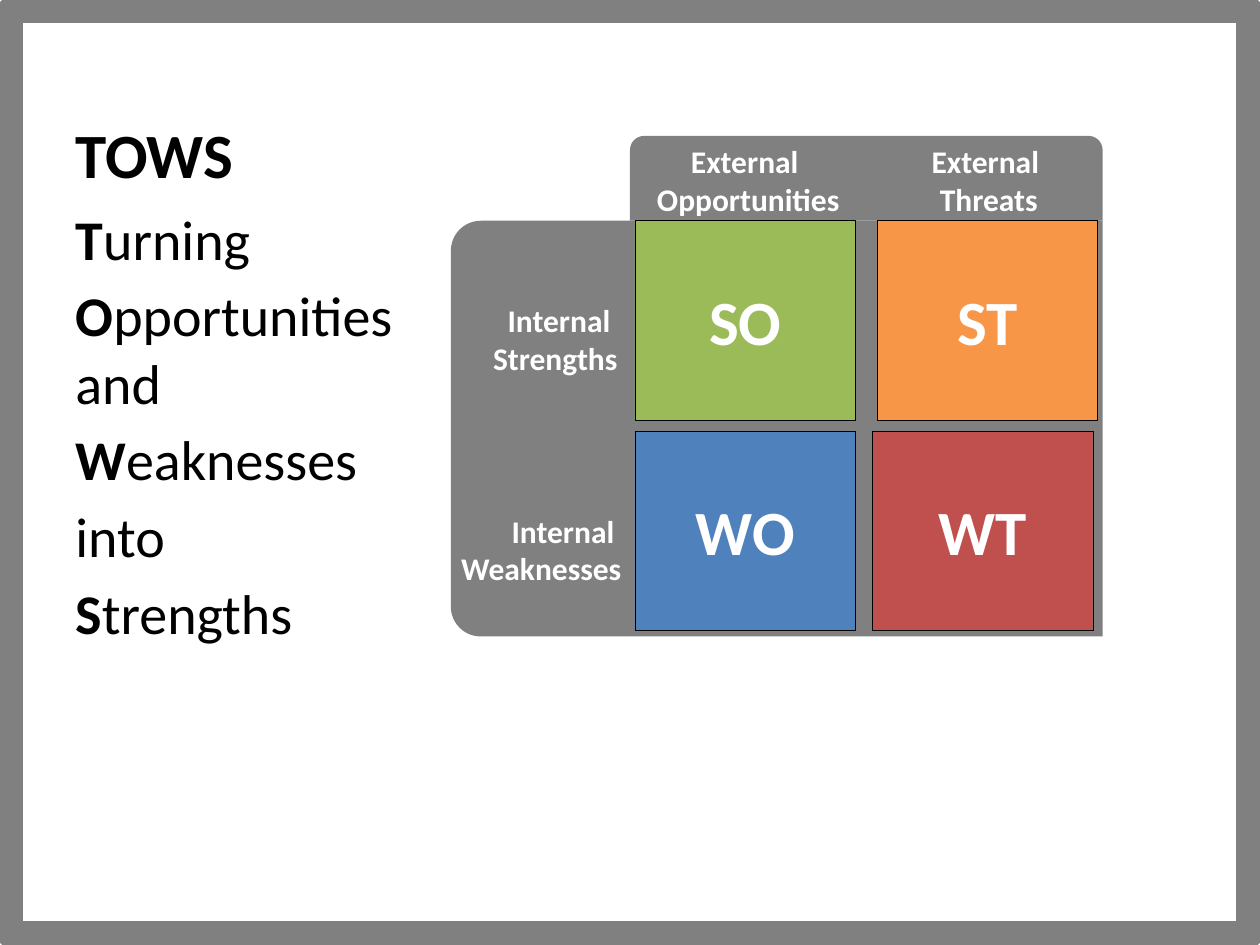
from pptx import Presentation
from pptx.dml.color import RGBColor
from pptx.enum.shapes import MSO_SHAPE
from pptx.enum.text import MSO_ANCHOR, MSO_AUTO_SIZE, PP_ALIGN
from pptx.util import Cm, Pt

RECT = MSO_SHAPE.RECTANGLE
TAB = MSO_SHAPE.ROUND_2_SAME_RECTANGLE
LEFT, CENTER, RIGHT = PP_ALIGN.LEFT, PP_ALIGN.CENTER, PP_ALIGN.RIGHT
TOP, MIDDLE, BOTTOM = MSO_ANCHOR.TOP, MSO_ANCHOR.MIDDLE, MSO_ANCHOR.BOTTOM

BLACK = RGBColor(0x00, 0x00, 0x00)
WHITE = RGBColor(0xFF, 0xFF, 0xFF)
GREY = RGBColor(0x80, 0x80, 0x80)
GREEN = RGBColor(0x9B, 0xBB, 0x59)
ORANGE = RGBColor(0xF7, 0x96, 0x46)
BLUE = RGBColor(0x4F, 0x81, 0xBD)
RED = RGBColor(0xC0, 0x50, 0x4D)

# Matrix geometry in cm
MATRIX_LEFT, MATRIX_TOP, MATRIX_WIDTH, MATRIX_HEIGHT = 12.7, 4.45, 9.53, 8.38
HEADER_TOP, HEADER_HEIGHT = 2.74, 1.71
SIDE_WIDTH = 3.61
QUADRANT_WIDTH, QUADRANT_HEIGHT = 4.45, 4.02
LABEL_WIDTH, LABEL_HEIGHT = 4.37, 1.8

# Each paragraph is a bold lead and a plain remainder
ACRONYM = [("T", "urning"), ("O", "pportunities and"), ("W", "eaknesses"),
           ("", "into"), ("S", "trengths")]
QUADRANTS = [("SO", 12.8, 4.45, GREEN), ("ST", 17.68, 4.45, ORANGE),
             ("WO", 12.8, 8.69, BLUE), ("WT", 17.58, 8.69, RED)]
LABELS = [("External \vOpportunities", 12.9, 2.74, CENTER),
          ("External \vThreats", 17.75, 2.74, CENTER),
          ("Internal \vStrengths", 8.33, 5.94, RIGHT),
          ("Internal \vWeaknesses", 8.41, 10.19, RIGHT)]


def write_text(shape, paragraphs, size, color=WHITE, align=CENTER, anchor=TOP,
               gap=0):
    """Fill a shape with paragraphs given as (bold lead, plain remainder)."""
    frame = shape.text_frame
    frame.word_wrap = True
    frame.auto_size = MSO_AUTO_SIZE.NONE
    frame.vertical_anchor = anchor
    for index, (lead, remainder) in enumerate(paragraphs):
        paragraph = frame.add_paragraph() if index else frame.paragraphs[0]
        paragraph.alignment = align
        paragraph.space_before = Pt(gap if index else 0)
        for text, bold in ((lead, True), (remainder, False)):
            for line_number, line in enumerate(text.split("\v")):
                if line_number:
                    paragraph.add_line_break()
                if not line:
                    continue
                run = paragraph.add_run()
                run.text = line
                run.font.name = "Calibri"
                run.font.size = Pt(size)
                run.font.bold = bold
                run.font.color.rgb = color


def add_block(slide, kind, left, top, width, height, fill, line=None,
              line_width=0.25):
    block = slide.shapes.add_shape(kind, Cm(left), Cm(top), Cm(width), Cm(height))
    block.shadow.inherit = False
    block.fill.solid()
    block.fill.fore_color.rgb = fill
    if line is None:
        block.line.fill.background()
    else:
        block.line.color.rgb = line
        block.line.width = Pt(line_width)
    return block


def add_text_box(slide, left, top, width, height, paragraphs, size, **style):
    box = slide.shapes.add_textbox(Cm(left), Cm(top), Cm(width), Cm(height))
    write_text(box, paragraphs, size, **style)


def add_title(slide, text):
    title = slide.shapes.title
    title.left, title.top = Cm(1.27), Cm(0.76)
    title.width, title.height = Cm(8.36), Cm(3.23)
    write_text(title, [(text, "")], 36, color=BLACK, align=LEFT, anchor=BOTTOM)


def add_matrix(slide):
    # Grey backing, header tab and side tab turned to the left
    add_block(slide, RECT, MATRIX_LEFT, MATRIX_TOP, MATRIX_WIDTH, MATRIX_HEIGHT, GREY)
    add_block(slide, TAB, MATRIX_LEFT, HEADER_TOP, MATRIX_WIDTH, HEADER_HEIGHT, GREY)
    side_left = MATRIX_LEFT - (SIDE_WIDTH + MATRIX_HEIGHT) / 2
    side_top = MATRIX_TOP + (MATRIX_HEIGHT - SIDE_WIDTH) / 2
    side = add_block(slide, TAB, side_left, side_top, MATRIX_HEIGHT, SIDE_WIDTH, GREY)
    side.rotation = 270

    # Strategy quadrants
    for name, left, top, color in QUADRANTS:
        quadrant = add_block(slide, RECT, left, top, QUADRANT_WIDTH,
                             QUADRANT_HEIGHT, color, line=BLACK)
        write_text(quadrant, [(name, "")], 36, anchor=MIDDLE)

    # Row and column labels
    for text, left, top, align in LABELS:
        add_text_box(slide, left, top, LABEL_WIDTH, LABEL_HEIGHT, [(text, "")],
                     18, align=align)


def main():
    deck = Presentation()
    deck.slide_width, deck.slide_height = Cm(25.4), Cm(19.05)
    slide = deck.slides.add_slide(deck.slide_layouts[5])

    # Page frame
    add_block(slide, RECT, 0.21, 0.21, 24.98, 18.63, WHITE, line=GREY, line_width=15)
    # Bring the title in front of the frame
    slide.shapes.title.element.getparent().append(slide.shapes.title.element)
    add_title(slide, "TOWS")
    add_text_box(slide, 1.27, 3.99, 8.36, 13.03, ACRONYM, 32, color=BLACK,
                 align=LEFT, gap=5.5)
    add_matrix(slide)
    deck.save("out.pptx")


if __name__ == "__main__":
    main()
